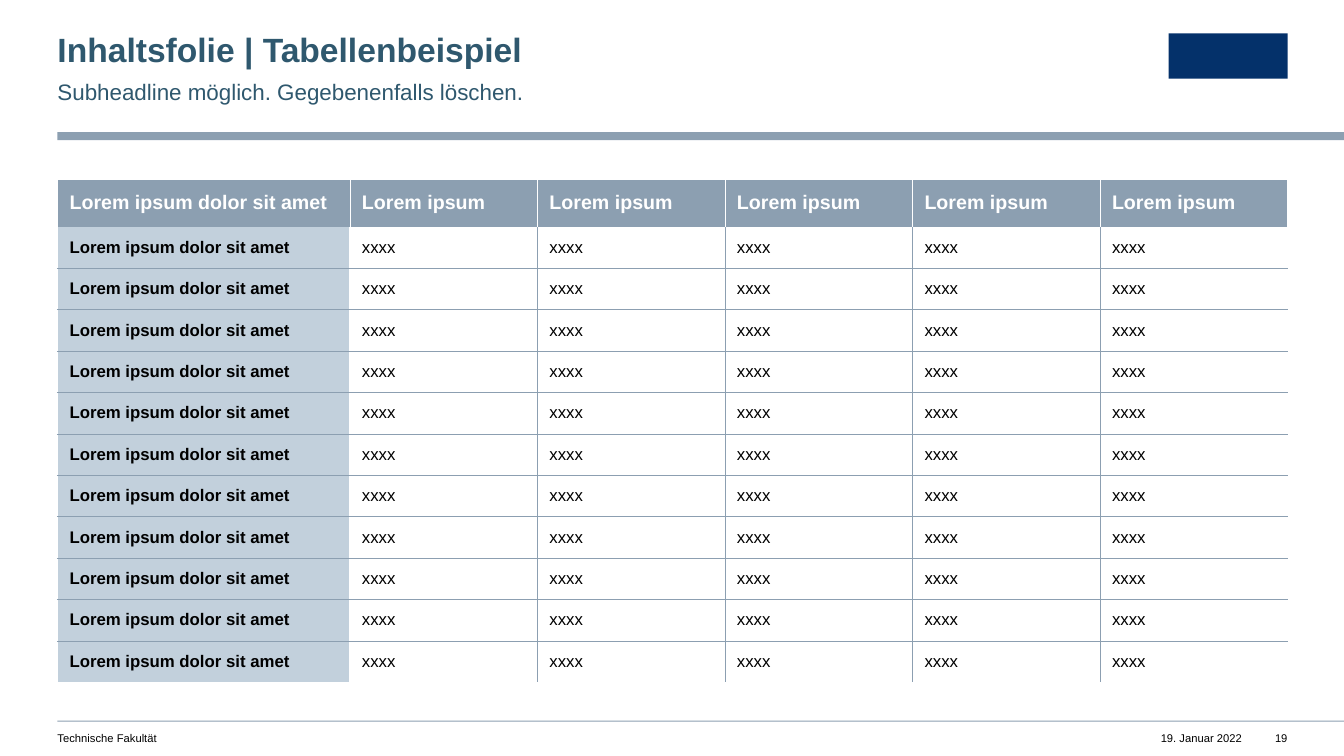
"""Builds the table example slide with a title, a subheadline and a footer."""
from lxml import etree
from pptx import Presentation
from pptx import util as u
from pptx.dml.color import RGBColor
from pptx.enum import shapes, text
from pptx.oxml import ns

COLORS = {"slate": "8C9FB1", "pale": "C2D0DC", "petrol": "2F586E",
          "navy": "04316A", "white": "FFFFFF", "black": "000000"}
FONT = "Arial"
LEFT = 0.57
COLUMN_WIDTHS = [2.9] + [1.86] * 5
BODY_ROWS = 11
TABLE_TOP, TABLE_HEIGHT, HEADER_HEIGHT = 1.78, 4.99, 0.47
ROW_LABEL = "Lorem ipsum dolor sit amet"
HEADER = [ROW_LABEL] + ["Lorem ipsum"] * 5
ROWS = [HEADER] + [[ROW_LABEL] + ["xxxx"] * 5] * BODY_ROWS


def color(name):
    return RGBColor.from_string(COLORS[name])


def add_run(paragraph, content, size, color_name, bold=False):
    run = paragraph.add_run()
    run.text = content
    run.font.name = FONT
    run.font.size = u.Pt(size)
    run.font.bold = bold
    run.font.color.rgb = color(color_name)


def place(shape, left, top, width, height):
    shape.left, shape.top = u.Inches(left), u.Inches(top)
    shape.width, shape.height = u.Inches(width), u.Inches(height)


def set_frame(frame, wrap=True, right=0):
    frame.word_wrap = wrap
    frame.auto_size = text.MSO_AUTO_SIZE.NONE
    frame.vertical_anchor = text.MSO_ANCHOR.TOP
    frame.margin_left = frame.margin_top = frame.margin_bottom = 0
    frame.margin_right = u.Inches(right)


def add_bar(slide, left, top, width, height, color_name):
    bar = slide.shapes.add_shape(
        shapes.MSO_SHAPE.RECTANGLE, u.Inches(left), u.Inches(top),
        u.Inches(width), u.Inches(height))
    bar.shadow.inherit = False
    bar.fill.solid()
    bar.fill.fore_color.rgb = color(color_name)
    bar.line.fill.background()


def add_footer(slide, content, left, width, alignment, wrap=False):
    box = slide.shapes.add_textbox(
        u.Inches(left), u.Inches(7.26), u.Inches(width), u.Inches(0.13))
    set_frame(box.text_frame, wrap)
    paragraph = box.text_frame.paragraphs[0]
    paragraph.alignment = alignment
    add_run(paragraph, content, 8, "black")


def fill_title(slide):
    title = slide.shapes.title
    place(title, LEFT, 0.33, 7.49, 0.36)
    set_frame(title.text_frame)
    paragraph = title.text_frame.paragraphs[0]
    paragraph.alignment = text.PP_ALIGN.LEFT
    paragraph.line_spacing = 0.9
    add_run(paragraph, "Inhaltsfolie | Tabellenbeispiel", 24, "petrol", True)


def fill_subheadline(slide):
    body = slide.placeholders[1]
    place(body, LEFT, 0.75, 7.49, 0.27)
    set_frame(body.text_frame, right=0.39)
    paragraph = body.text_frame.paragraphs[0]
    paragraph.line_spacing = 1.1
    paragraph.space_before = u.Pt(0)
    paragraph.space_after = u.Pt(12)
    properties = paragraph._p.get_or_add_pPr()
    properties.set("marL", "0")
    properties.set("indent", "0")
    etree.SubElement(properties, ns.qn("a:buNone"))
    add_run(paragraph, "Subheadline möglich. Gegebenenfalls löschen.", 16, "petrol")


def vertical_border(row, edge):
    last = len(COLUMN_WIDTHS)
    if row == 0:
        return "white", 1 if edge in (0, last) else 0.5
    return ("white", 1) if edge in (0, 1, last) else ("slate", 0.25)


def horizontal_border(edge):
    if edge == 0:
        return "white", 1
    return None if edge in (1, len(ROWS)) else ("slate", 0.25)


def add_border(cell, tag, border):
    line = etree.SubElement(cell._tc.get_or_add_tcPr(), ns.qn(tag))
    if border is None:
        line.set("w", "0")
        etree.SubElement(line, ns.qn("a:noFill"))
        return
    color_name, width = border
    line.set("w", str(int(u.Pt(width))))
    fill = etree.SubElement(line, ns.qn("a:solidFill"))
    etree.SubElement(fill, ns.qn("a:srgbClr"), val=COLORS[color_name])


def format_cell(cell, row, column, content):
    add_border(cell, "a:lnL", vertical_border(row, column))
    add_border(cell, "a:lnR", vertical_border(row, column + 1))
    add_border(cell, "a:lnT", horizontal_border(row))
    add_border(cell, "a:lnB", horizontal_border(row + 1))
    is_header = row == 0
    if is_header or column == 0:
        cell.fill.solid()
        cell.fill.fore_color.rgb = color("slate" if is_header else "pale")
    else:
        cell.fill.background()
    cell.vertical_anchor = text.MSO_ANCHOR.MIDDLE
    cell.margin_left = cell.margin_right = u.Inches(0.12)
    cell.margin_top = cell.margin_bottom = u.Inches(0.04)
    add_run(cell.text_frame.paragraphs[0], content, 14 if is_header else 12,
            "white" if is_header else "black", is_header or column == 0)


def add_data_table(slide):
    table = slide.shapes.add_table(
        len(ROWS), len(COLUMN_WIDTHS), u.Inches(LEFT), u.Inches(TABLE_TOP),
        u.Inches(sum(COLUMN_WIDTHS)), u.Inches(TABLE_HEIGHT)).table
    table.first_row = table.horz_banding = False
    for column, width in zip(table.columns, COLUMN_WIDTHS):
        column.width = u.Inches(width)
    for row in table.rows:
        row.height = u.Inches((TABLE_HEIGHT - HEADER_HEIGHT) / BODY_ROWS)
    table.rows[0].height = u.Inches(HEADER_HEIGHT)
    for row, contents in enumerate(ROWS):
        for column, content in enumerate(contents):
            format_cell(table.cell(row, column), row, column, content)


def main():
    presentation = Presentation()
    presentation.slide_width = u.Inches(13.33)
    presentation.slide_height = u.Inches(7.5)
    slide = presentation.slides.add_slide(presentation.slide_layouts[1])
    add_bar(slide, LEFT, 1.31, 12.76, 0.08, "slate")
    add_bar(slide, LEFT, 7.15, 12.76, 0.01, "slate")
    add_bar(slide, 11.59, 0.33, 1.18, 0.45, "navy")
    fill_title(slide)
    fill_subheadline(slide)
    add_data_table(slide)
    add_footer(slide, "Technische Fakultät", LEFT, 5.98, text.PP_ALIGN.LEFT, True)
    add_footer(slide, "19. Januar 2022", 11.39, 0.93, text.PP_ALIGN.RIGHT)
    add_footer(slide, "19", 12.56, 0.21, text.PP_ALIGN.RIGHT)
    presentation.save("out.pptx")


if __name__ == "__main__":
    main()
